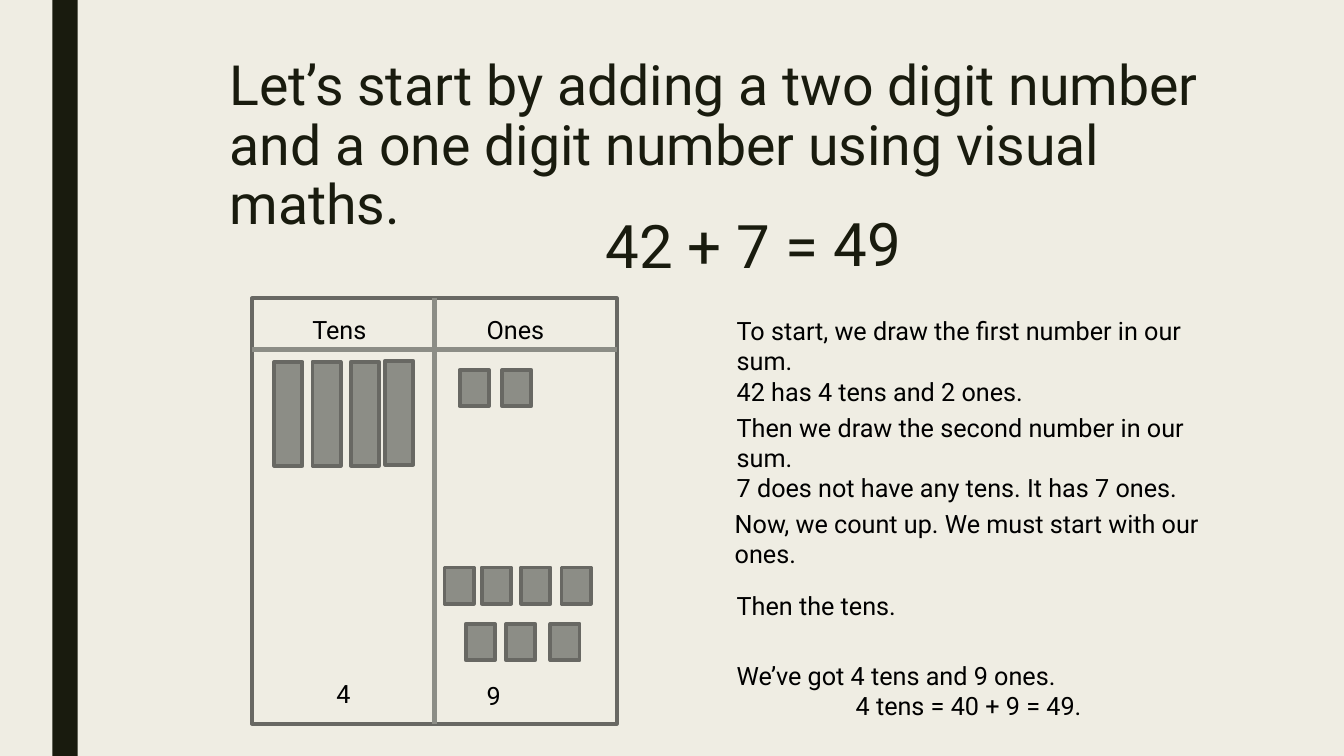
"""Build a place value slide that adds 42 and 7."""
from dataclasses import dataclass

from lxml.etree import SubElement
from pptx import Presentation
from pptx.dml.color import RGBColor
from pptx.enum.shapes import MSO_CONNECTOR, MSO_SHAPE
from pptx.enum.text import MSO_ANCHOR, MSO_AUTO_SIZE, PP_ALIGN
from pptx.oxml.ns import qn
from pptx.shapes.autoshape import Shape
from pptx.shapes.connector import Connector
from pptx.slide import Slide
from pptx.util import Emu, Inches, Pt

HUES = {"paper": "EFEDE3", "ink": "191B0E", "black": "000000",
        "edge": "686863", "block": "8C8D86"}
FONT = "Roboto"
CELL = Inches(0.1)
COLS, ROWS = 133.33, 75


@dataclass(frozen=True)
class Row:
    """A row of equal blocks, measured in grid cells."""
    top: float
    lefts: tuple[float, ...]
    width: float = 2.9
    height: float = 3.6


@dataclass(frozen=True)
class Note:
    """A small text box, with an indent for its last line."""
    left: float
    top: float
    lines: tuple[str, ...]
    width: float = 50.8
    height: float = 4
    indent: float = 0


BLOCKS = (
    Row(35.9, (27.2, 31, 34.8), 2.8, 10.3),
    Row(35.8, (38.2,), 2.8, 10.3),
    Row(36.7, (45.6, 49.8)),
    Row(56.3, (44.1, 47.8, 51.7, 55.7)),
    Row(61.9, (46.2, 50.2, 54.6)),
)

NOTES = (
    Note(30, 30.7, ("Tens",), 15.6),
    Note(47.3, 30.7, ("Ones",), 15.6),
    Note(32.4, 66.8, ("4",), 15.6),
    Note(47.3, 67, ("9",), 15.6),
    Note(72.1, 30.8, ("To start, we draw the first number in our sum.",
                      "42 has 4 tens and 2 ones."), height=7.1),
    Note(72.1, 40.4, ("Then we draw the second number in our sum.",
                      "7 does not have any tens. It has 7 ones."), height=7.1),
    Note(71.9, 49.9, ("Now, we count up. We must start with our ones.",),
         height=7.1),
    Note(72.1, 58.1, ("Then the tens.",)),
    Note(72.1, 65, ("We’ve got 4 tens and 9 ones.", "4 tens = 40 + 9 = 49."),
         height=7.1, indent=11.8),
)


def span(cells: float) -> Emu:
    """Turn grid cells into a length."""
    return Emu(round(cells * CELL))


def hue(name: str) -> RGBColor:
    """Look up a colour by name."""
    return RGBColor.from_string(HUES[name])


def box(slide: Slide, left: float, top: float, width: float, height: float,
        fill: str = "", edge: str = "") -> Shape:
    """Draw a rectangle."""
    shape = slide.shapes.add_shape(
        MSO_SHAPE.RECTANGLE, *map(span, (left, top, width, height)))
    shape.shadow.inherit = False
    if fill:
        shape.fill.solid()
        shape.fill.fore_color.rgb = hue(fill)
    else:
        shape.fill.background()
    if edge:
        shape.line.color.rgb = hue(edge)
        shape.line.width = Pt(2.75)
    else:
        shape.line.fill.background()
    return shape


def rule(slide: Slide, left: float, top: float, right: float,
         base: float) -> Connector:
    """Draw a straight divider."""
    line = slide.shapes.add_connector(
        MSO_CONNECTOR.STRAIGHT, *map(span, (left, top, right, base)))
    line.line.color.rgb = hue("block")
    line.line.width = Pt(3.75)
    SubElement(line._element.spPr, qn("a:effectLst"))
    return line


def text(slide: Slide, lines: tuple[str, ...], *, left: float, top: float,
         width: float, height: float, size: float = 18, tint: str = "black",
         space: float = 1, indent: float = 0, grow: bool = False) -> None:
    """Write lines in a text box."""
    frame = slide.shapes.add_textbox(
        *map(span, (left, top, width, height))).text_frame
    frame.word_wrap = True
    frame.vertical_anchor = MSO_ANCHOR.TOP
    frame.auto_size = (MSO_AUTO_SIZE.SHAPE_TO_FIT_TEXT if grow
                       else MSO_AUTO_SIZE.NONE)
    frame.text = "\n".join(lines)
    for para in frame.paragraphs:
        para.alignment = PP_ALIGN.LEFT
        para.line_spacing = space
        font = para.runs[0].font
        font.name, font.size, font.color.rgb = FONT, Pt(size), hue(tint)
    if indent:
        frame.paragraphs[-1]._p.get_or_add_pPr().set("marL", str(span(indent)))


def chart(slide: Slide) -> None:
    """Draw the tens and ones frame with its blocks."""
    left, top, width, height = 25, 29.6, 36.2, 42.2
    frame = box(slide, left, top, width, height, edge="edge")
    mid = left + width / 2
    split = rule(slide, mid, top, mid, top + height)
    split.begin_connect(frame, 0)
    split.end_connect(frame, 2)
    rule(slide, left, 34.7, left + width, 34.7)
    for row in BLOCKS:
        for start in row.lefts:
            box(slide, start, row.top, row.width, row.height, "block", "edge")


def main() -> None:
    """Build and save the slide."""
    deck = Presentation()
    deck.slide_width, deck.slide_height = span(COLS), span(ROWS)
    slide = deck.slides.add_slide(deck.slide_layouts[6])
    slide.background.fill.solid()
    slide.background.fill.fore_color.rgb = hue("paper")
    box(slide, 5.2, 0, 2.5, ROWS, "ink")
    text(slide, ("Let’s start by adding a two digit number and a one digit "
                 "number using visual maths.",),
         left=21.8, top=5.2, width=105, height=16.2, size=39.6, tint="ink",
         space=0.9)
    for part, left, top, width in (("42 + 7 =", 59.1, 21.6, 24),
                                   ("49", 81.7, 21.4, 12)):
        text(slide, (part,), left=left, top=top, width=width, height=6.7,
             size=42.9, tint="ink", space=0.8)
    chart(slide)
    for note in NOTES:
        text(slide, note.lines, left=note.left, top=note.top, width=note.width,
             height=note.height, indent=note.indent, grow=True)
    deck.save("out.pptx")


if __name__ == "__main__":
    main()
